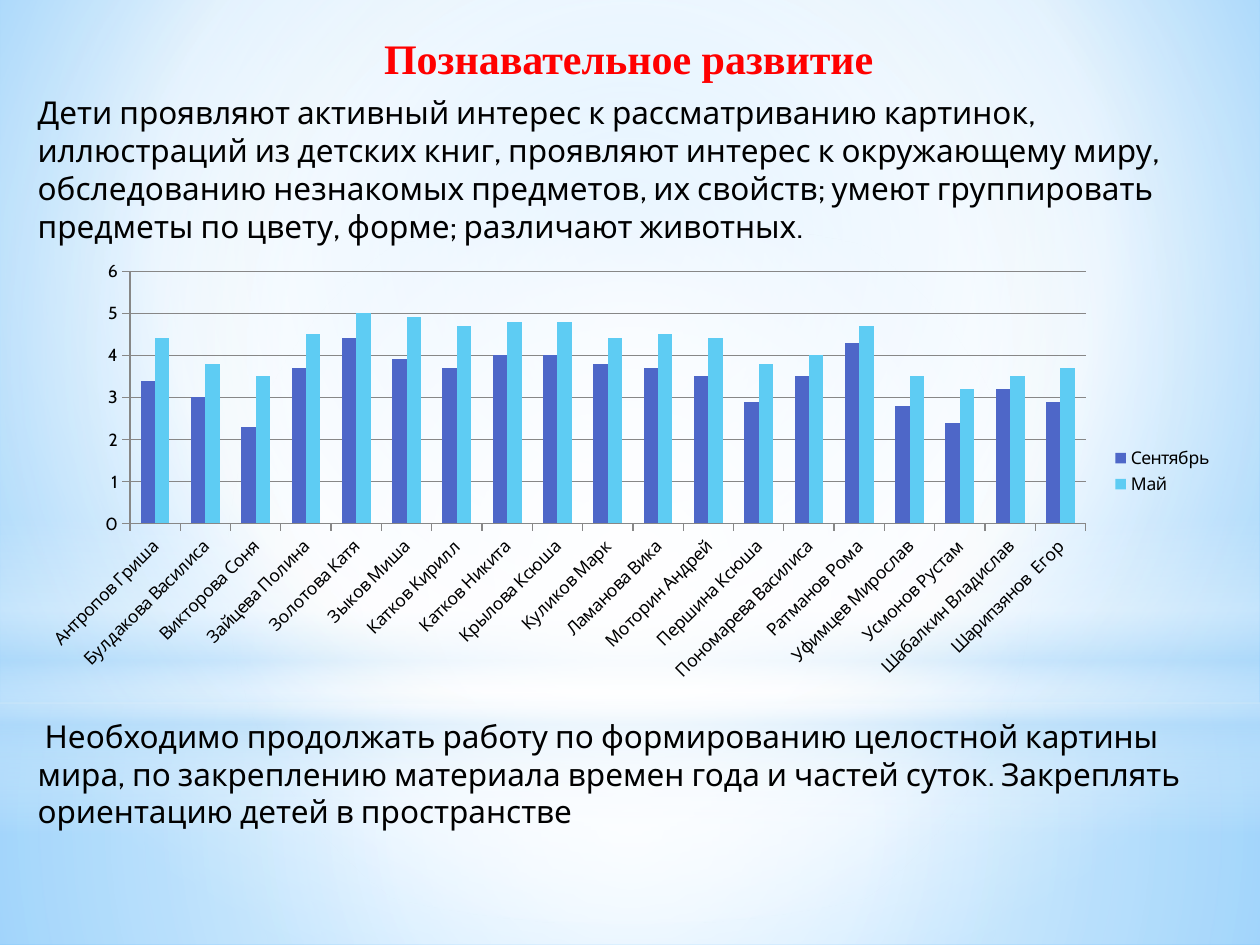
from lxml import etree
from pptx import Presentation
from pptx.chart.data import CategoryChartData
from pptx.dml.color import RGBColor
from pptx.enum.chart import XL_CHART_TYPE as ChartType
from pptx.enum.chart import XL_LEGEND_POSITION as LegendPosition
from pptx.enum.chart import XL_TICK_MARK as TickMark
from pptx.enum.shapes import MSO_SHAPE as Preset
from pptx.enum.text import MSO_AUTO_SIZE as AutoSize
from pptx.enum.text import PP_ALIGN as Align
from pptx.oxml.ns import qn
from pptx.util import Inches, Pt

RED = RGBColor(0xFF, 0x00, 0x00)
BLACK = RGBColor(0x00, 0x00, 0x00)
GRAY = RGBColor(0x87, 0x87, 0x87)
INDIGO = RGBColor(0x4E, 0x67, 0xC8)
SKY = RGBColor(0x5E, 0xCC, 0xF3)
WHITE = RGBColor(0xFF, 0xFF, 0xFF)
PALE_BLUE = RGBColor(0xB4, 0xDC, 0xFA)
LIGHT_BLUE = RGBColor(0x9E, 0xD5, 0xFF)
BRIGHT_BLUE = RGBColor(0x5B, 0xB9, 0xFF)

BODY_FONT = "Cabin"
TITLE_FONT = "Times New Roman"
CENTER = (50, 50, 50, 50)

TITLE = "Познавательное развитие"
ACHIEVEMENTS = (
    "Дети проявляют активный интерес к рассматриванию картинок, "
    "иллюстраций из детских книг, проявляют интерес к окружающему миру, "
    "обследованию незнакомых предметов, их свойств; умеют группировать "
    "предметы по цвету, форме; различают животных."
)
NEXT_STEPS = (
    " Необходимо продолжать работу по формированию целостной картины мира, "
    "по закреплению материала времен года и частей суток. "
    "Закреплять ориентацию детей в пространстве"
)
SCORES = [
    ("Антропов Гриша", 3.4, 4.4),
    ("Булдакова Василиса", 3, 3.8),
    ("Викторова Соня", 2.3, 3.5),
    ("Зайцева Полина", 3.7, 4.5),
    ("Золотова Катя", 4.4, 5),
    ("Зыков Миша", 3.9, 4.9),
    ("Катков Кирилл", 3.7, 4.7),
    ("Катков Никита", 4, 4.8),
    ("Крылова Ксюша", 4, 4.8),
    ("Куликов Марк", 3.8, 4.4),
    ("Ламанова Вика", 3.7, 4.5),
    ("Моторин Андрей", 3.5, 4.4),
    ("Першина Ксюша", 2.9, 3.8),
    ("Пономарева Василиса", 3.5, 4),
    ("Ратманов Рома", 4.3, 4.7),
    ("Уфимцев Мирослав", 2.8, 3.5),
    ("Усмонов Рустам", 2.4, 3.2),
    ("Шабалкин Владислав", 3.2, 3.5),
    ("Шарипзянов  Егор", 2.9, 3.7),
]


def inches(box):
    return [Inches(length) for length in box]


def gradient(stops, focus=None, angle=90):
    """Gradient from (position, colour, opacity) stops in percent; radial if focus is given."""
    fill = etree.Element(qn("a:gradFill"), rotWithShape="1")
    stop_list = etree.SubElement(fill, qn("a:gsLst"))
    for position, color, opacity in stops:
        stop = etree.SubElement(stop_list, qn("a:gs"), pos=str(position * 1000))
        rgb = etree.SubElement(stop, qn("a:srgbClr"), val=str(color))
        if opacity < 100:
            etree.SubElement(rgb, qn("a:alpha"), val=str(opacity * 1000))
    if focus:
        radial = etree.SubElement(fill, qn("a:path"), path="circle")
        sides = {side: str(value * 1000) for side, value in zip("ltrb", focus)}
        etree.SubElement(radial, qn("a:fillToRect"), **sides)
    else:
        etree.SubElement(fill, qn("a:lin"), ang=str(angle * 60000), scaled="0")
    return fill


def replace_solid_fill(properties, fill):
    properties.replace(properties.find(qn("a:solidFill")), fill)


def add_glow(slide, box, preset, stops, focus=None):
    shape = slide.shapes.add_shape(preset, *inches(box))
    shape.shadow.inherit = False
    shape.line.fill.background()
    shape.fill.solid()
    replace_solid_fill(shape.element.spPr, gradient(stops, focus))


def add_backdrop(slide):
    slide.background.fill.solid()
    properties = slide.element.find(".//" + qn("p:bgPr"))
    stops = [(0, LIGHT_BLUE, 100), (60, WHITE, 100), (100, BRIGHT_BLUE, 100)]
    replace_solid_fill(properties, gradient(stops, (20, 10, 20, 60)))

    add_glow(slide, (0, 5.58, 10, 1.92), Preset.RECTANGLE,
             [(0, WHITE, 91), (37, WHITE, 76), (100, PALE_BLUE, 79)], CENTER)
    add_glow(slide, (0, 0, 10, 5.58), Preset.RECTANGLE,
             [(0, WHITE, 89), (48, WHITE, 62), (100, PALE_BLUE, 79)], CENTER)
    add_glow(slide, (0, 4.12, 10, 2.5), Preset.RECTANGLE,
             [(0, WHITE, 0), (29, WHITE, 30), (45, PALE_BLUE, 40),
              (55, WHITE, 26), (65, PALE_BLUE, 60), (100, WHITE, 0)])
    add_glow(slide, (0, 1.75, 10, 5.58), Preset.OVAL,
             [(0, WHITE, 100), (56, WHITE, 0)], CENTER)


def add_text(slide, box, text, size=18, font=BODY_FONT, color=BLACK,
             bold=False, wrap=True):
    frame = slide.shapes.add_textbox(*inches(box)).text_frame
    frame.word_wrap = wrap
    frame.auto_size = AutoSize.SHAPE_TO_FIT_TEXT
    paragraph = frame.paragraphs[0]
    paragraph.alignment = Align.LEFT
    run = paragraph.add_run()
    run.text = text
    run.font.size = Pt(size)
    run.font.name = font
    run.font.bold = bold
    run.font.color.rgb = color


def add_score_chart(slide, box):
    names, september, may = zip(*SCORES)
    data = CategoryChartData()
    data.categories = names
    data.add_series("Сентябрь", september)
    data.add_series("Май", may)
    chart = slide.shapes.add_chart(
        ChartType.COLUMN_CLUSTERED, *inches(box), data).chart
    chart.has_title = False
    chart.font.size = Pt(10)
    chart.font.name = BODY_FONT
    chart.font.color.rgb = BLACK

    chart.has_legend = True
    chart.legend.position = LegendPosition.RIGHT
    chart.legend.include_in_layout = False

    plot = chart.plots[0]
    plot.gap_width = 150
    plot.vary_by_categories = False
    for series, color in zip(plot.series, (INDIGO, SKY)):
        series.format.fill.solid()
        series.format.fill.fore_color.rgb = color

    for axis in (chart.category_axis, chart.value_axis):
        axis.major_tick_mark = TickMark.OUTSIDE
        axis.minor_tick_mark = TickMark.NONE
        axis.format.line.color.rgb = GRAY
    chart.value_axis.minimum_scale = 0
    chart.value_axis.maximum_scale = 6
    chart.value_axis.major_unit = 1
    chart.value_axis.has_major_gridlines = True
    chart.value_axis.major_gridlines.format.line.color.rgb = GRAY


def main():
    presentation = Presentation()
    presentation.slide_width = Inches(10)
    presentation.slide_height = Inches(7.5)
    slide = presentation.slides.add_slide(presentation.slide_layouts[6])
    add_backdrop(slide)
    add_text(slide, (2.95, 0.21, 4.13, 0.5), TITLE, size=24,
             font=TITLE_FONT, color=RED, bold=True, wrap=False)
    add_text(slide, (0.2, 0.69, 9.29, 1.31), ACHIEVEMENTS)
    add_score_chart(slide, (0.2, 2, 9.53, 3.48))
    add_text(slide, (0.2, 5.64, 9.29, 1.01), NEXT_STEPS)
    presentation.save("out.pptx")


if __name__ == "__main__":
    main()
